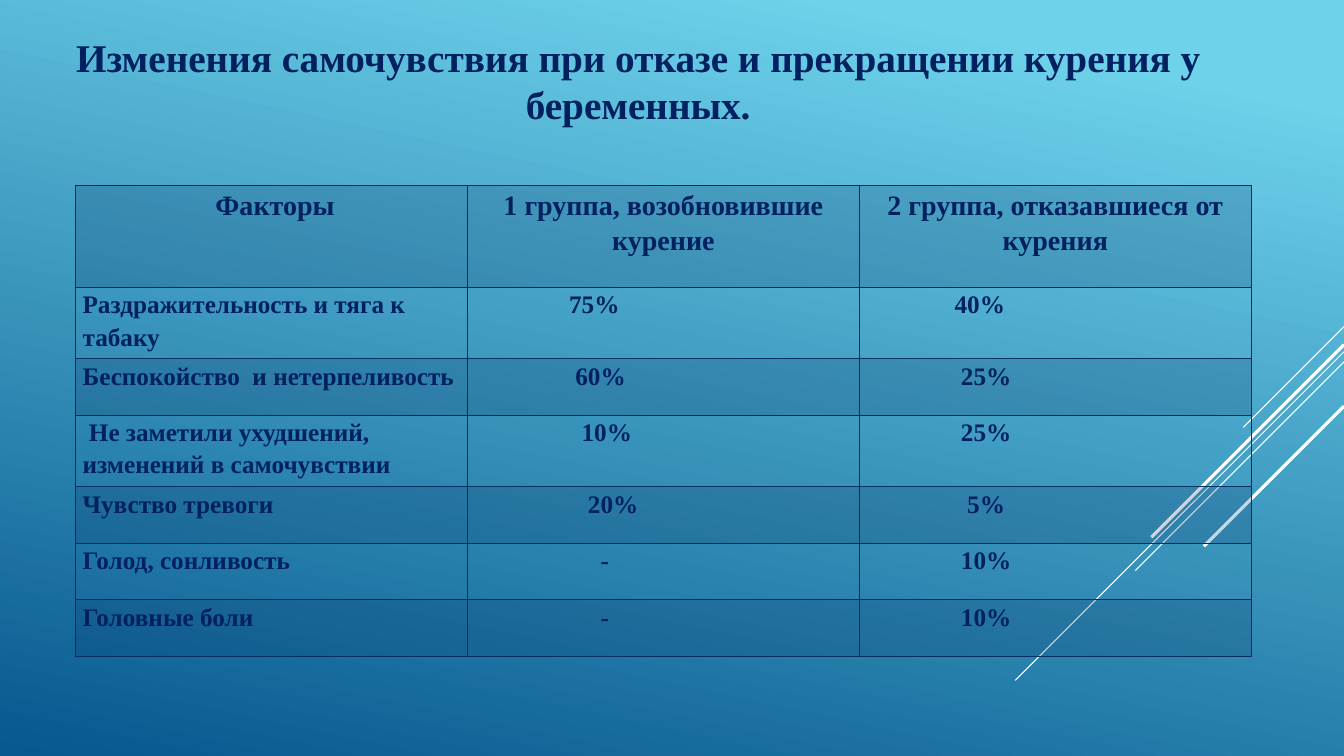
import pptx
import pptx.dml.color
import pptx.enum.shapes
import pptx.enum.text
import pptx.oxml
import pptx.oxml.ns
import pptx.util
import lxml.etree

Inches = pptx.util.Inches
Pt = pptx.util.Pt
ALIGN = pptx.enum.text.PP_ALIGN
FONT = "Times New Roman"
NAVY = "002060"
DEEP_BLUE = "052F61"
SLIDE_WIDTH, SLIDE_HEIGHT = 13.33, 7.5
CELL_MARGIN = 0.07
SPACE_WIDTH = 0.0625

TITLE = "Изменения самочувствия при отказе и прекращении курения у беременных."
HEADINGS = [" Факторы", "1 группа, возобновившие курение", "2 группа, отказавшиеся от курения"]
FACTORS = [
    ("Раздражительность и тяга к табаку", ("75%", 15), ("40%", 14)),
    ("Беспокойство  и нетерпеливость", ("60%", 16), ("25%", 15)),
    (" Не заметили ухудшений, изменений в самочувствии", ("10%", 17), ("25%", 15)),
    ("Чувство тревоги", ("20%", 18), ("5%", 16)),
    ("Голод, сонливость", ("-", 20), ("10%", 15)),
    ("Головные боли", ("-", 20), ("10%", 15)),
]
ROW_HEIGHTS = [1.01, 0.71, 0.56, 0.71, 0.56, 0.56, 0.56]
RAYS = [(3.24, 1.0, 0.75), (3.49, 3.26, 0.75), (3.59, 2.07, 0.75), (3.42, 1.91, 2.25), (4.03, 1.39, 2.25)]


def rgb(value):
    return pptx.dml.color.RGBColor.from_string(value)


def style_paragraph(paragraph, size, align):
    paragraph.alignment = align
    paragraph.font.name = FONT
    paragraph.font.size = Pt(size)
    paragraph.font.bold = True
    paragraph.font.color.rgb = rgb(NAVY)


def paint_background(slide):
    fill = slide.background.fill
    fill.gradient()
    fill.gradient_angle = 360 - 102
    for stop, (position, color) in zip(fill.gradient_stops, [(0.1, "6ED2EB"), (1.0, "06588E")]):
        stop.position = position
        stop.color.rgb = rgb(color)


def add_rays(slide, right):
    for top, reach, weight in RAYS:
        ray = slide.shapes.add_connector(
            pptx.enum.shapes.MSO_CONNECTOR.STRAIGHT,
            Inches(right), Inches(top), Inches(right - reach), Inches(top + reach))
        ray.line.color.rgb = rgb("FFFFFF")
        ray.line.width = Pt(weight)
        lxml.etree.SubElement(ray._element.spPr, pptx.oxml.ns.qn("a:effectLst"))


def add_title(slide, left, top, width, height):
    title = slide.shapes.add_textbox(Inches(left), Inches(top), Inches(width), Inches(height))
    frame = title.text_frame
    frame.word_wrap = True
    frame.auto_size = pptx.enum.text.MSO_AUTO_SIZE.SHAPE_TO_FIT_TEXT
    frame.text = TITLE
    style_paragraph(frame.paragraphs[0], 28, ALIGN.CENTER)


def add_borders(cell):
    properties = cell._tc.get_or_add_tcPr()
    for side in ("lnL", "lnR", "lnT", "lnB"):
        properties.append(pptx.oxml.parse_xml(
            f'<a:{side} {pptx.oxml.ns.nsdecls("a")} w="{Pt(1)}"><a:solidFill>'
            f'<a:srgbClr val="{DEEP_BLUE}"/></a:solidFill></a:{side}>'))


def shade(cell, shaded):
    if not shaded:
        cell.fill.background()
        return
    cell.fill.solid()
    cell.fill.fore_color.rgb = rgb(DEEP_BLUE)
    color = cell._tc.tcPr.find("/".join(map(pptx.oxml.ns.qn, ("a:solidFill", "a:srgbClr"))))
    lxml.etree.SubElement(color, pptx.oxml.ns.qn("a:alpha"), val="20000")


def fill_cell(cell, text, size, align, indent, shaded):
    cell.margin_left = Inches(CELL_MARGIN + indent * SPACE_WIDTH)
    cell.margin_right = Inches(CELL_MARGIN)
    cell.margin_top = cell.margin_bottom = 0
    cell.text = text
    paragraph = cell.text_frame.paragraphs[0]
    style_paragraph(paragraph, size, align)
    paragraph.line_spacing = 1.15
    add_borders(cell)
    shade(cell, shaded)


def add_factors_table(slide, left, top, width):
    rows = [[(heading, 0) for heading in HEADINGS]]
    rows += [[(factor, 0), *groups] for factor, *groups in FACTORS]
    factors = slide.shapes.add_table(
        len(rows), len(HEADINGS), Inches(left), Inches(top),
        Inches(width), Inches(sum(ROW_HEIGHTS))).table
    factors.first_row = factors.horz_banding = False
    for column in factors.columns:
        column.width = Inches(width / len(HEADINGS))
    for row_index, (row, height) in enumerate(zip(rows, ROW_HEIGHTS)):
        factors.rows[row_index].height = Inches(height)
        size, align = (18, ALIGN.LEFT) if row_index else (20, ALIGN.CENTER)
        for column_index, (text, indent) in enumerate(row):
            fill_cell(factors.cell(row_index, column_index), text, size, align,
                      indent, row_index % 2 == 0)


def main():
    deck = pptx.Presentation()
    deck.slide_width = Inches(SLIDE_WIDTH)
    deck.slide_height = Inches(SLIDE_HEIGHT)
    slide = deck.slides.add_slide(deck.slide_layouts[6])
    paint_background(slide)
    add_rays(slide, SLIDE_WIDTH)
    add_factors_table(slide, 0.75, 1.84, 11.66)
    add_title(slide, -0.25, 0.28, 13.16, 1.04)
    deck.save("out.pptx")


if __name__ == "__main__":
    main()
